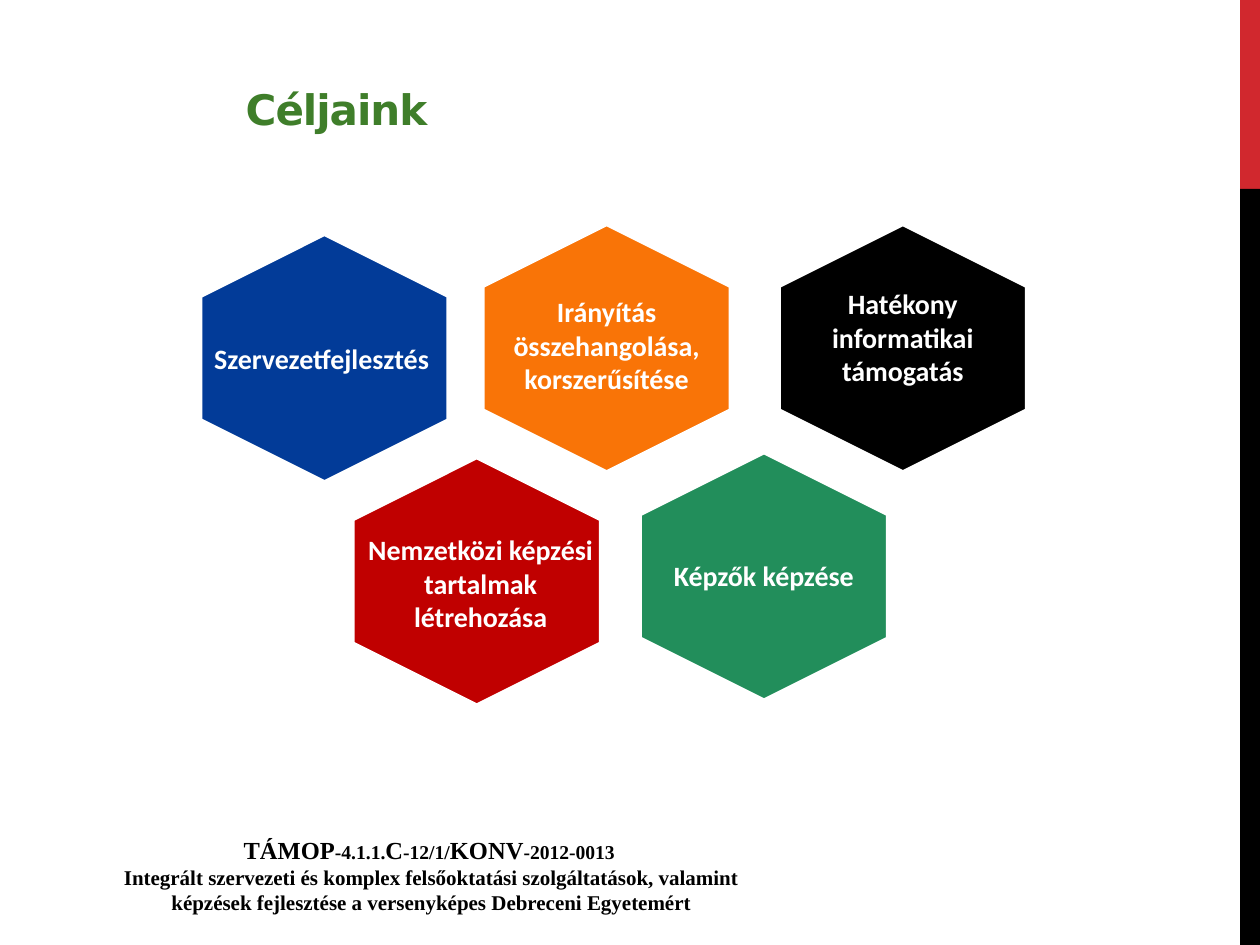
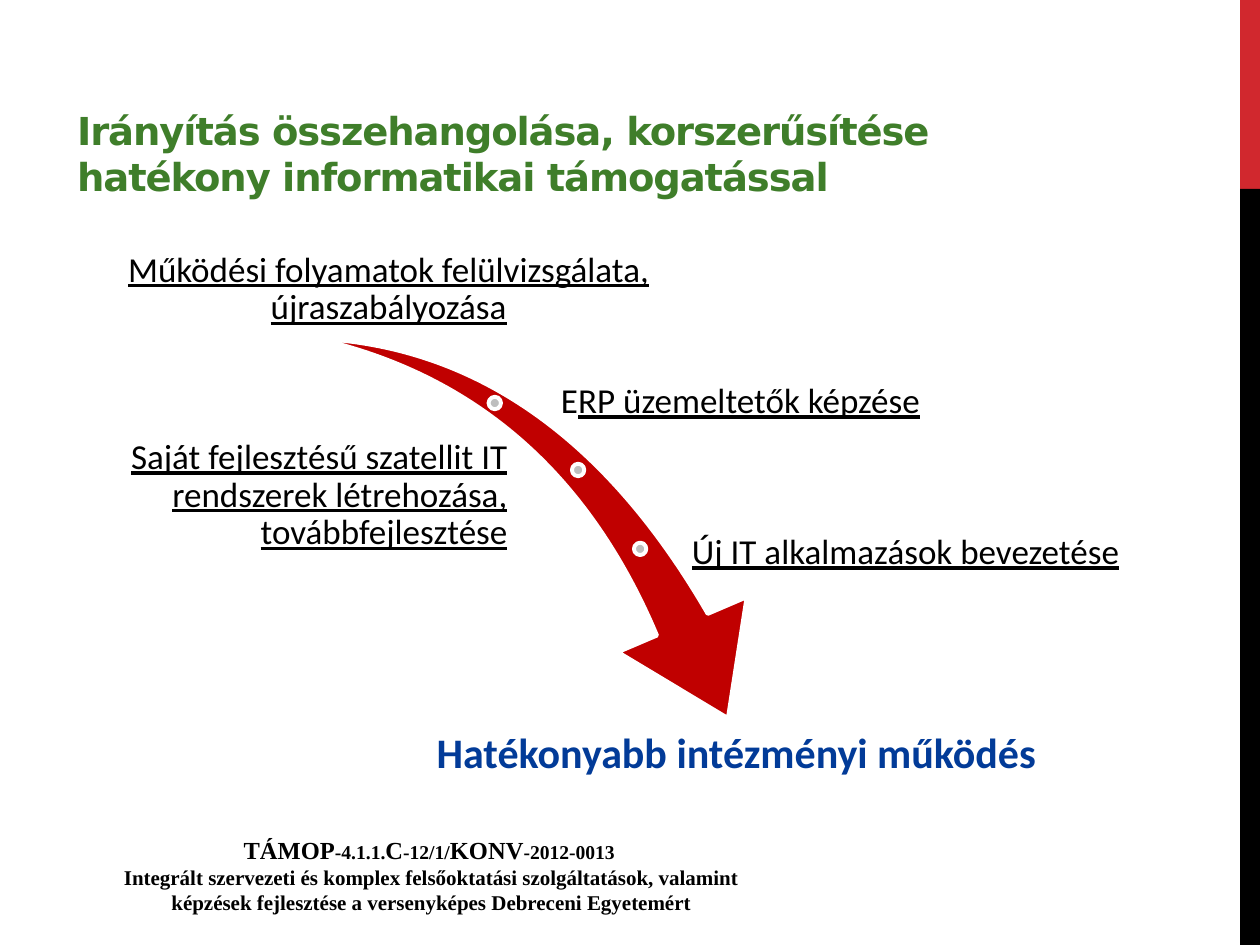
from pptx import Presentation
from pptx.dml.color import RGBColor
from pptx.enum.shapes import MSO_SHAPE as Shape
from pptx.enum.text import MSO_ANCHOR as Anchor, MSO_AUTO_SIZE as AutoSize, PP_ALIGN as Align
from pptx.util import Cm, Pt

COLORS = {
    "red_band": "D1282E", "black": "000000", "white": "FFFFFF", "title": "3F7E2A",
    "crimson": "C00000", "green": "228E5B", "blue": "023B98", "orange": "F97407",
    "dot": "BEBEBE",
}
RGB = {name: RGBColor.from_string(value) for name, value in COLORS.items()}


def add_filled(slide, kind, box, color, outlined=False):
    shape = slide.shapes.add_shape(kind, *[Cm(value) for value in box])
    shape.shadow.inherit = False
    shape.fill.solid()
    shape.fill.fore_color.rgb = RGB[color]
    if outlined:
        shape.line.color.rgb = RGB["white"]
        shape.line.width = Pt(2.25)
    else:
        shape.line.fill.background()
    return shape


def add_label(slide, text, box, size, color, align, anchor, inset=0.08, bottom=0.08, bold=False):
    frame = slide.shapes.add_textbox(*[Cm(value) for value in box]).text_frame
    frame.word_wrap = True
    frame.vertical_anchor = anchor
    frame.margin_left = frame.margin_right = frame.margin_top = Cm(inset)
    frame.margin_bottom = Cm(bottom)
    label = frame.paragraphs[0]
    label.text = text
    label.alignment = align
    label.font.name = "Calibri"
    label.font.size = Pt(size)
    label.font.bold = bold
    label.font.color.rgb = RGB[color]
    return label


prs = Presentation()
prs.slide_width, prs.slide_height = Cm(25.4), Cm(19.05)

titles = [
    ("Céljaink", (4.7, 0.91, 11.99, 1.91), 24),
    ("Irányítás összehangolása, korszerűsítése hatékony informatikai támogatással",
     (1.3, 1.83, 18.8, 2.31), 22),
]
footer_lines = [
    ("TÁMOP-4.1.1.C-12/1/KONV-2012-0013 ", 14, "small"),
    ("Integrált szervezeti és komplex felsőoktatási szolgáltatások, valamint "
     "képzések fejlesztése a versenyképes Debreceni Egyetemért", 12, "none"),
]

for heading, box, size in titles:
    slide = prs.slides.add_slide(prs.slide_layouts[5])
    add_filled(slide, Shape.RECTANGLE, (25, 0, 0.4, 3.81), "red_band")
    add_filled(slide, Shape.RECTANGLE, (25, 3.81, 0.4, 15.24), "black")

    footer = add_filled(slide, Shape.RECTANGLE, (1.7, 16.54, 14, 2.06), "white").text_frame
    footer.word_wrap = True
    footer.vertical_anchor = Anchor.TOP
    footer.margin_top = Cm(0.29)
    for index, (text, points, caps) in enumerate(footer_lines):
        line = footer.add_paragraph() if index else footer.paragraphs[0]
        line.text = text
        line.alignment = Align.CENTER
        line.font.name = "Times New Roman"
        line.font.size = Pt(points)
        line.font.bold = True
        line.font.color.rgb = RGB["black"]
        line.runs[0]._r.get_or_add_rPr().set("cap", caps)

    title = slide.shapes.title
    title.left, title.top, title.width, title.height = [Cm(value) for value in box]
    title.text_frame.text = heading
    title.text_frame.word_wrap = True
    title.text_frame.auto_size = AutoSize.NONE
    title.text_frame.vertical_anchor = Anchor.BOTTOM
    headline = title.text_frame.paragraphs[0]
    headline.alignment = Align.LEFT
    headline.font.name = "DejaVu Sans"
    headline.font.size = Pt(size)
    headline.font.bold = True
    headline.font.color.rgb = RGB["title"]
    headline.runs[0]._r.get_or_add_rPr().set("spc", "-60")

goals_slide, process_slide = prs.slides

goals = [
    ("Nemzetközi képzési tartalmak létrehozása", "crimson", 7.11, 9.22, 7.29, 10.29, 4.8),
    ("Képzők képzése", "green", 12.9, 9.12, 12.9, 10.13, 5),
    ("Szervezetfejlesztés", "blue", 4.04, 4.72, 4.29, 5.75, 4.39),
    ("Hatékony informatikai támogatás", "black", 15.7, 4.52, 15.7, 5.33, 5),
    ("Irányítás összehangolása, korszerűsítése", "orange", 9.73, 4.52, 9.73, 5.49, 5),
]
for goal, color, left, top, text_left, text_top, text_width in goals:
    hexagon = add_filled(goals_slide, Shape.HEXAGON, (left, top, 5, 5), color, outlined=True)
    hexagon.adjustments[0] = 0.25
    hexagon.rotation = 90
    add_label(goals_slide, goal, (text_left, text_top, text_width, 3.43), 16, "white",
              Align.CENTER, Anchor.MIDDLE, inset=0, bottom=0.5, bold=True)

swoosh = add_filled(process_slide, Shape.SWOOSH_ARROW, (6.2, 7.11, 9.7, 6.78), "crimson",
                    outlined=True)
swoosh.adjustments[0], swoosh.adjustments[1] = 0.163, 0.314
swoosh.rotation = 73.3
for left, top in [(9.85, 8), (11.53, 9.35), (12.78, 10.94)]:
    add_filled(process_slide, Shape.OVAL, (left, top, 0.25, 0.25), "dot", outlined=True)

steps = [
    ("", "Működési folyamatok felülvizsgálata, újraszabályozása",
     (1.55, 4.88, 12.57, 1.8), Align.CENTER, Anchor.BOTTOM),
    ("E", "RP üzemeltetők képzése", (11.23, 7.21, 8.33, 1.8), Align.LEFT, Anchor.MIDDLE),
    ("", "Saját fejlesztésű szatellit IT rendszerek létrehozása, továbbfejlesztése",
     (0.81, 7.72, 9.5, 4.55), Align.RIGHT, Anchor.MIDDLE),
    ("", "Új IT alkalmazások bevezetése", (13.87, 10.03, 9.45, 2.24), Align.LEFT, Anchor.MIDDLE),
]
for plain, underlined, box, align, anchor in steps:
    step = add_label(process_slide, plain, box, 20, "black", align, anchor)
    step.line_spacing = 0.9
    link = step.add_run()
    link.text = underlined
    link.font.underline = True

result = add_label(process_slide, "Hatékonyabb intézményi működés", (7.44, 14.68, 14.81, 1),
                   24, "blue", Align.CENTER, Anchor.TOP, bold=True)
result.line_spacing = 0.9

prs.save("out.pptx")
